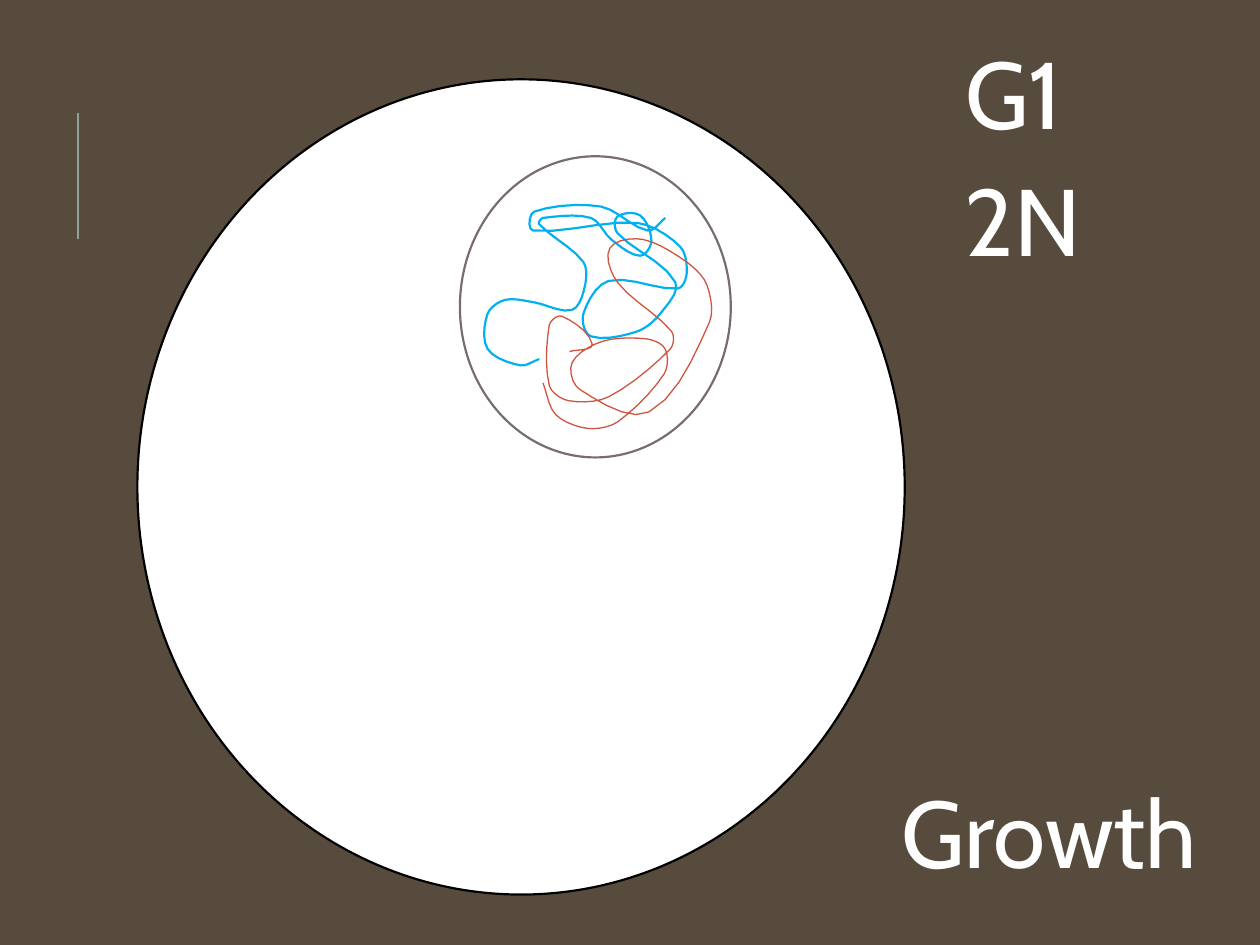
"""Build a slide of a cell in G1 with two loose chromosomes in its nucleus."""
from dataclasses import dataclass
from math import dist

from lxml.etree import SubElement
from pptx import Presentation
from pptx.dml.color import RGBColor
from pptx.enum.shapes import MSO_CONNECTOR as Connector, MSO_SHAPE as Shape
from pptx.enum.text import MSO_ANCHOR as Anchor, MSO_AUTO_SIZE as AutoSize, PP_ALIGN as Align
from pptx.oxml.ns import qn
from pptx.util import Inches, Pt

Point = tuple[float, float]


@dataclass(frozen=True)
class Theme:
    background: str = "564B3C"
    accent: str = "93A299"
    white: str = "FFFFFF"
    cell_edge: str = "000000"
    nucleus_edge: str = "786C71"
    blue: str = "00B0F0"
    red: str = "CF543F"
    font: str = "Cabin"
    label_size: int = 54


@dataclass(frozen=True)
class Membrane:
    left: float
    top: float
    width: float
    height: float
    edge: str


@dataclass(frozen=True)
class Label:
    text: str
    left: float
    top: float
    width: float
    is_title: bool = False


@dataclass(frozen=True)
class Strand:
    color: str
    weight: float
    points: list[Point]


THEME = Theme()
LABEL_HEIGHT = 1.01
POINT_UNIT = Inches(0.01)
CURVE_STEPS = 5
CURVE_TENSION = 0.9

MEMBRANES = [
    Membrane(1.09, 0.63, 6.09, 6.47, THEME.cell_edge),
    Membrane(3.65, 1.24, 2.15, 2.39, THEME.nucleus_edge),
]

LABELS = [
    Label("G1", 7.56, 0.23, 1.82, is_title=True),
    Label("2N", 7.56, 0.23 + LABEL_HEIGHT, 1.82),
    Label("Growth", 7.06, 6.09, 2.83),
]

STRANDS = [
    Strand(THEME.blue, 1.25, [
        (428, 285), (413, 290), (387, 277), (387, 249), (401, 238), (424, 240), (454, 246),
        (464, 228), (463, 208), (428, 178), (431, 173), (469, 173), (485, 190), (508, 203),
        (517, 191), (508, 171), (490, 172), (490, 185), (536, 224), (524, 249), (506, 263),
        (469, 267), (463, 249), (483, 223), (538, 229), (545, 217), (540, 196), (506, 177),
        (423, 183), (424, 168), (477, 164), (514, 183), (528, 173),
    ]),
    Strand(THEME.red, 0.75, [
        (431, 304), (441, 329), (466, 340), (490, 335), (527, 297), (528, 277), (513, 269),
        (478, 271), (454, 288), (460, 309), (515, 327), (563, 256), (561, 226), (545, 208),
        (510, 190), (484, 197), (490, 224), (533, 263), (532, 277), (483, 315), (451, 318),
        (436, 306), (436, 258), (446, 251), (470, 273), (452, 279),
    ]),
]


def rgb(color: str) -> RGBColor:
    return RGBColor.from_string(color)


def smooth(points: list[Point]) -> list[Point]:
    """Return points along a Hermite curve through the given points."""
    padded = [points[0], *points, points[-1]]
    curve = [points[0]]
    for before, start, end, after in zip(padded, padded[1:], padded[2:], padded[3:]):
        reach = CURVE_TENSION * dist(start, end)
        leave = reach / dist(before, end)
        arrive = reach / dist(start, after)
        for step in range(1, CURVE_STEPS + 1):
            t = step / CURVE_STEPS
            blend = t * t * (3 - 2 * t)
            x, y = (
                start[axis] + blend * (end[axis] - start[axis])
                + t * (1 - t) ** 2 * leave * (end[axis] - before[axis])
                - t * t * (1 - t) * arrive * (after[axis] - start[axis])
                for axis in range(2)
            )
            curve.append((x, y))
    return curve


def set_line(shape, color: str, weight: float) -> None:
    shape.line.color.rgb = rgb(color)
    shape.line.width = Pt(weight)


def draw_accent(slide) -> None:
    left = Inches(0.62)
    accent = slide.shapes.add_connector(
        Connector.STRAIGHT, left, Inches(1.9), left, Inches(0.9))
    set_line(accent, THEME.accent, 1.5)
    SubElement(accent.element.spPr, qn("a:effectLst"))


def draw_membrane(slide, membrane: Membrane) -> None:
    shape = slide.shapes.add_shape(
        Shape.OVAL, Inches(membrane.left), Inches(membrane.top),
        Inches(membrane.width), Inches(membrane.height))
    shape.shadow.inherit = False
    shape.fill.solid()
    shape.fill.fore_color.rgb = rgb(THEME.white)
    set_line(shape, membrane.edge, 1.25)


def draw_strand(slide, strand: Strand) -> None:
    start, *others = [
        (round(x * POINT_UNIT), round(y * POINT_UNIT)) for x, y in smooth(strand.points)]
    builder = slide.shapes.build_freeform(*start)
    builder.add_line_segments(others, close=False)
    shape = builder.convert_to_shape()
    shape.shadow.inherit = False
    shape.fill.background()
    set_line(shape, strand.color, strand.weight)


def draw_label(slide, label: Label) -> None:
    frame = (Inches(label.left), Inches(label.top), Inches(label.width), Inches(LABEL_HEIGHT))
    shape = slide.shapes.title if label.is_title else slide.shapes.add_textbox(*frame)
    shape.left, shape.top, shape.width, shape.height = frame
    text_frame = shape.text_frame
    text_frame.text = label.text
    text_frame.word_wrap = True
    text_frame.auto_size = AutoSize.SHAPE_TO_FIT_TEXT
    text_frame.vertical_anchor = Anchor.TOP
    paragraph = text_frame.paragraphs[0]
    paragraph.alignment = Align.LEFT
    font = paragraph.runs[0].font
    font.name = THEME.font
    font.size = Pt(THEME.label_size)
    font.color.rgb = rgb(THEME.white)


def main() -> None:
    presentation = Presentation()
    presentation.slide_width = Inches(10)
    presentation.slide_height = Inches(7.5)
    slide = presentation.slides.add_slide(presentation.slide_layouts.get_by_name("Title Only"))
    slide.background.fill.solid()
    slide.background.fill.fore_color.rgb = rgb(THEME.background)
    draw_accent(slide)
    for membrane in MEMBRANES:
        draw_membrane(slide, membrane)
    for strand in STRANDS:
        draw_strand(slide, strand)
    for label in LABELS:
        draw_label(slide, label)
    presentation.save("out.pptx")


if __name__ == "__main__":
    main()
